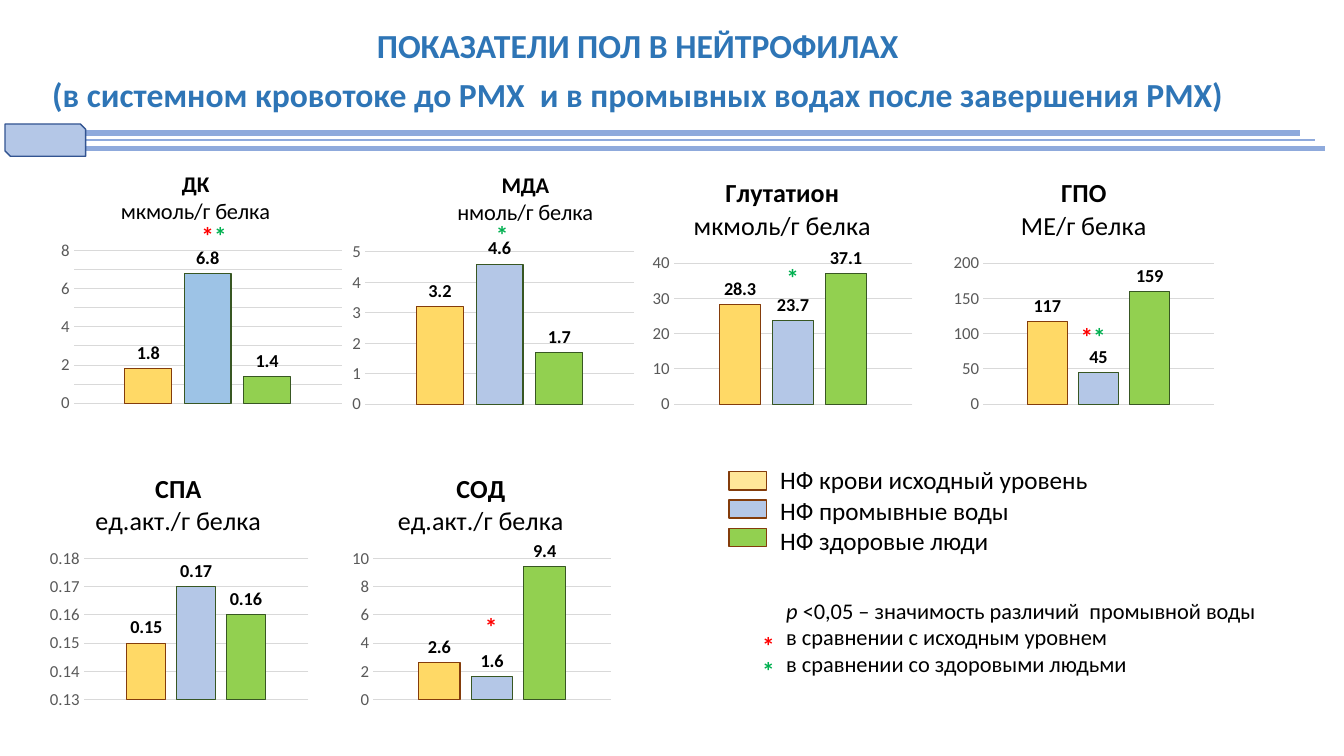
from lxml import etree
from pptx import Presentation
from pptx.chart.data import CategoryChartData
from pptx.dml.color import RGBColor
from pptx.enum.chart import XL_CHART_TYPE as ChartType, XL_LABEL_POSITION as LabelPosition, XL_TICK_MARK as TickMark
from pptx.enum.shapes import MSO_CONNECTOR as Connector, MSO_SHAPE as Shape
from pptx.enum.text import MSO_ANCHOR as Anchor, MSO_AUTO_SIZE as AutoSize, PP_ALIGN as Align
from pptx.oxml import parse_xml
from pptx.oxml.ns import nsdecls, qn
from pptx.util import Inches, Pt

FONT = "Calibri"
COLORS = {
    "title": "2E75B6", "rule": "8FAADC", "tab_line": "325491", "text": "000000",
    "axis": "595959", "grid": "D9D9D9", "yellow": "FFD966", "pale_yellow": "FFE699",
    "blue": "B4C7E7", "sky": "9DC3E6", "green": "92D050", "brown": "843C0B",
    "dark_green": "385723", "red_star": "FF0000", "green_star": "00B050",
}
TITLE = ["ПОКАЗАТЕЛИ ПОЛ В НЕЙТРОФИЛАХ",
         "(в системном кровотоке до PMX  и в промывных водах после завершения PMX)"]
RULES = [(0.09, 12.89, 1.32, 3.75), (0.12, 13.04, 1.39, 2), (0.07, 13.14, 1.47, 3.75)]

# name, unit, values, axis (min, max, step), frame (left, top, width),
# plot (left, top), title size, title position, middle bar colour
CHARTS = [
    ("ДК", "мкмоль/г белка", (1.8, 6.8, 1.4), (0, 8, 1), (0.53, 1.6, 2.91), (0.2, 0.89), 16, (0.22, 0.02), "sky"),
    ("МДА", "нмоль/г белка", (3.2, 4.6, 1.7), (0, 5, 1), (3.43, 1.61, 2.91), (0.19, 0.89), 16, (0.37, 0.02), "blue"),
    ("Глутатион", "мкмоль/г белка", (28.3, 23.7, 37.1), (0, 40, 10), (6.42, 1.61, 2.68), (0.26, 1), 18.6, None, "blue"),
    ("ГПО", "МЕ/г белка", (117, 45, 159), (0, 200, 50), (9.41, 1.61, 2.68), (0.34, 1), 18.6, None, "blue"),
    ("СПА", "ед.акт./г белка", (0.15, 0.17, 0.16), (0.13, 0.18, 0.01), (0.43, 4.54, 2.68), (0.4, 1), 18.6, None, "blue"),
    ("СОД", "ед.акт./г белка", (2.6, 1.6, 9.4), (0, 10, 2), (3.43, 4.54, 2.68), (0.27, 1), 18.6, None, "blue"),
]
CHART_HEIGHT, PLOT_BOTTOM, PLOT_MARGIN = 2.55, 2.4, 0.05

LEGEND = [("НФ крови исходный уровень", "pale_yellow"), ("НФ промывные воды", "blue"),
          ("НФ здоровые люди", "green")]
SIGNIFICANCE = [[("p", True), (" <0,05 – значимость различий  промывной воды", False)],
                [("в сравнении с исходным уровнем", False)],
                [("в сравнении со здоровыми людьми", False)]]
STARS = [(1.9, 2.19, ["red_star", "green_star"]), (4.82, 2.18, ["green_star"]),
         (7.7, 2.6, ["green_star"]), (10.62, 3.19, ["red_star", "green_star"]),
         (4.71, 6.07, ["red_star"])]


def rgb(name):
    return RGBColor.from_string(COLORS[name])


def style_font(font, size, color, bold=False, italic=False):
    font.name, font.size, font.bold, font.italic = FONT, Pt(size), bold, italic
    font.color.rgb = rgb(color)


def style_area(fmt, fill, line, width):
    fmt.fill.solid()
    fmt.fill.fore_color.rgb = rgb(fill)
    fmt.line.color.rgb = rgb(line)
    fmt.line.width = Pt(width)


def add_box(shapes, kind, box, fill, line):
    shape = shapes.add_shape(kind, *map(Inches, box))
    shape.shadow.inherit = False
    style_area(shape, fill, line, 1)


def add_rule(shapes, left, right, y, width):
    rule = shapes.add_connector(Connector.STRAIGHT, Inches(left), Inches(y), Inches(right), Inches(y))
    rule.line.color.rgb = rgb("rule")
    rule.line.width = Pt(width)
    etree.SubElement(rule._element.spPr, qn("a:effectLst"))


def add_text(shapes, box, paragraphs, wrap=False, spacing=None):
    """Add a text box; each run is (text, size, color, bold, italic)."""
    frame = shapes.add_textbox(*map(Inches, box)).text_frame
    frame.word_wrap = wrap
    frame.auto_size = AutoSize.SHAPE_TO_FIT_TEXT
    for index, runs in enumerate(paragraphs):
        paragraph = frame.add_paragraph() if index else frame.paragraphs[0]
        paragraph.line_spacing = spacing
        for text, *style in runs:
            run = paragraph.add_run()
            run.text = text
            style_font(run.font, *style)


def layout_xml(inner=False, **values):
    """Manual chart layout in fractions of the chart frame."""
    target = '<c:layoutTarget val="inner"/>' if inner else ""
    modes = '<c:xMode val="edge"/><c:yMode val="edge"/>'
    sizes = "".join(f'<c:{key} val="{value:.4f}"/>' for key, value in values.items())
    return parse_xml(f'<c:layout {nsdecls("c")}><c:manualLayout>{target}{modes}{sizes}'
                     '</c:manualLayout></c:layout>')


def replace_layout(parent, layout, index):
    for old in parent.findall(qn("c:layout")):
        parent.remove(old)
    parent.insert(index, layout)


def add_bar_chart(slide, name, unit, values, scale, frame, plot_corner, title_size, title_at, middle):
    left, top, width = frame
    data = CategoryChartData()
    data.categories = ["1"]
    for number, value in enumerate(values, 1):
        data.add_series(f"Series {number}", [value])
    chart = slide.shapes.add_chart(ChartType.COLUMN_CLUSTERED, Inches(left), Inches(top),
                                   Inches(width), Inches(CHART_HEIGHT), data).chart
    style_font(chart.font, 10, "text")
    chart.has_legend = False

    title = chart.chart_title
    title.text_frame.text = f"{name}\n{unit}"
    for paragraph, bold in zip(title.text_frame.paragraphs, (True, False)):
        style_font(paragraph.runs[0].font, title_size, "text", bold)
    title.include_in_layout = False
    if title_at:
        replace_layout(title._element, layout_xml(x=title_at[0], y=title_at[1]), 1)

    plot_left, plot_top = plot_corner
    replace_layout(chart._chartSpace.chart.plotArea, layout_xml(
        inner=True, x=plot_left / width, y=plot_top / CHART_HEIGHT,
        w=(width - plot_left - PLOT_MARGIN) / width,
        h=(PLOT_BOTTOM - plot_top) / CHART_HEIGHT), 0)

    chart.category_axis.visible = False
    axis = chart.value_axis
    axis.minimum_scale, axis.maximum_scale, axis.major_unit = scale
    axis.major_tick_mark = axis.minor_tick_mark = TickMark.NONE
    axis.format.line.fill.background()
    axis.major_gridlines.format.line.color.rgb = rgb("grid")
    axis.major_gridlines.format.line.width = Pt(0.75)
    style_font(axis.tick_labels.font, 12, "axis")

    plot = chart.plots[0]
    plot.gap_width, plot.overlap, plot.vary_by_categories = 219, -27, False
    fills = [("yellow", "brown"), (middle, "dark_green"), ("green", "dark_green")]
    for series, (fill, line) in zip(plot.series, fills):
        style_area(series.format, fill, line, 0.75)
        labels = series.data_labels
        labels.show_value = True
        labels.position = LabelPosition.OUTSIDE_END
        style_font(labels.font, 13, "text", True)


def add_title(slide):
    title = slide.shapes.title
    title.left, title.top, title.width, title.height = map(Inches, (0.21, 0.2, 12.23, 0.99))
    frame = title.text_frame
    frame.text = "\n".join(TITLE)
    frame.word_wrap = False
    frame.auto_size = AutoSize.NONE
    frame.vertical_anchor = Anchor.TOP
    for paragraph in frame.paragraphs:
        paragraph.alignment = Align.CENTER
        paragraph.space_before = Pt(6)
        style_font(paragraph.runs[0].font, 24, "title", True)


def main():
    presentation = Presentation()
    presentation.slide_width, presentation.slide_height = Inches(13.33), Inches(7.5)
    slide = presentation.slides.add_slide(presentation.slide_layouts[5])

    header = slide.shapes.add_group_shape().shapes
    for rule in RULES:
        add_rule(header, *rule)
    add_box(header, Shape.SNIP_2_DIAG_RECTANGLE, (0.05, 1.23, 0.8, 0.32), "blue", "tab_line")
    add_title(slide)

    for chart in CHARTS:
        add_bar_chart(slide, *chart)

    legend = slide.shapes.add_group_shape().shapes
    for row, (_, fill) in enumerate(LEGEND):
        add_box(legend, Shape.RECTANGLE, (7.23, 4.68 + 0.28 * row, 0.37, 0.18), fill, "brown")
    add_text(legend, (7.64, 4.56, 3.33, 1.01), [[(text, 18, "text")] for text, _ in LEGEND])

    add_text(slide.shapes, (7.46, 6.25, 0.33, 0.61),
             [[("*", 18, color, True)] for color in ("red_star", "green_star")], spacing=Pt(18))
    add_text(slide.shapes, (7.7, 5.87, 4.97, 0.91),
             [[(text, 16, "text", False, italic) for text, italic in runs] for runs in SIGNIFICANCE])
    for left, top, colors in STARS:
        add_text(slide.shapes, (left, top, 0.68, 0.36),
                 [[("*", 18, color, True) for color in colors]], wrap=True, spacing=Pt(18))

    presentation.save("out.pptx")


if __name__ == "__main__":
    main()
